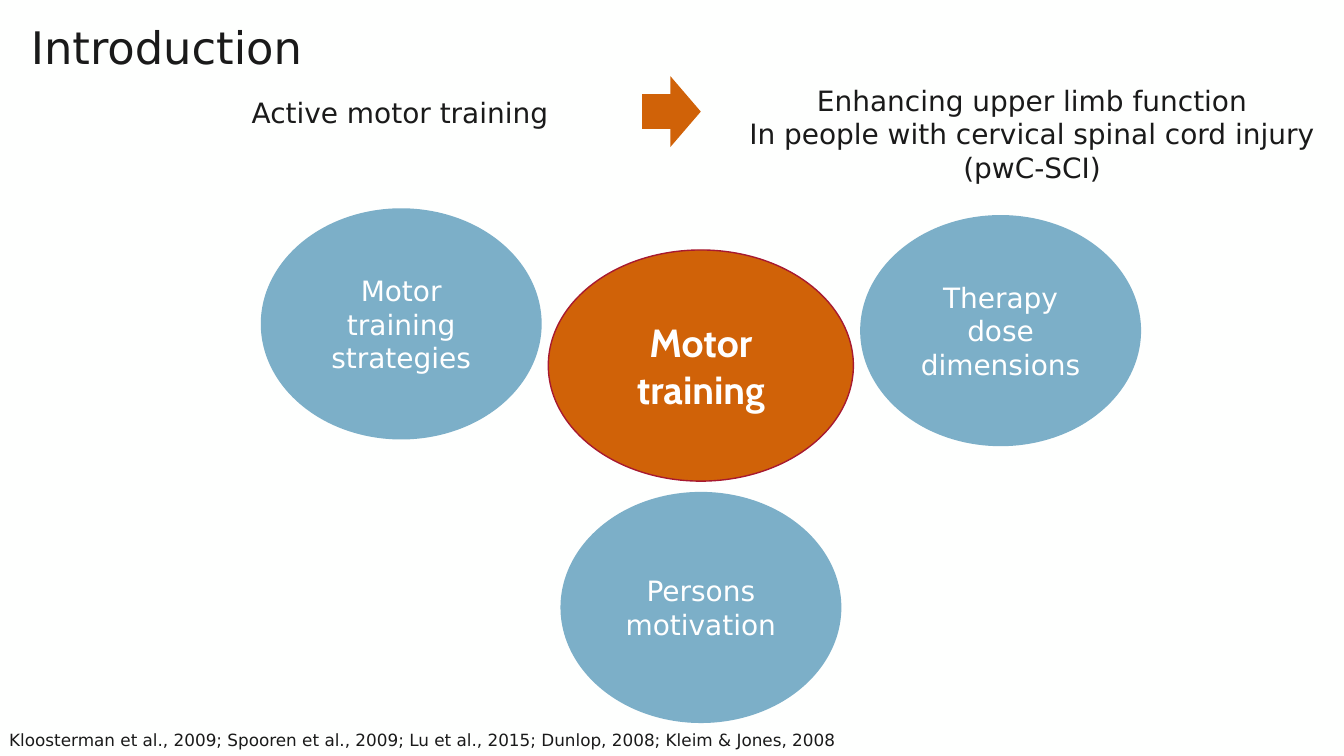
from dataclasses import dataclass

from lxml import etree
from pptx import Presentation
from pptx.dml.color import RGBColor
from pptx.enum.shapes import MSO_SHAPE
from pptx.enum.text import MSO_ANCHOR, MSO_AUTO_SIZE, PP_ALIGN
from pptx.oxml.ns import qn
from pptx.shapes.autoshape import Shape
from pptx.slide import Slide
from pptx.text.text import TextFrame
from pptx.util import Inches, Pt

LEFT, CENTER = PP_ALIGN.LEFT, PP_ALIGN.CENTER
TOP, MIDDLE = MSO_ANCHOR.TOP, MSO_ANCHOR.MIDDLE
ELLIPSE, DOWN_ARROW = MSO_SHAPE.OVAL, MSO_SHAPE.DOWN_ARROW
NO_AUTO_SIZE = MSO_AUTO_SIZE.NONE

SLIDE_WIDTH = 10
SLIDE_HEIGHT = SLIDE_WIDTH * 9 / 16

BODY_FONT, ACCENT_FONT = "DejaVu Sans", "Cabin"
INK, WHITE, BACKGROUND = "1A1A1A", "FFFFFF", "FEFFFE"
ORANGE, BLUE, RED = "D06208", "7CAFC8", "A71930"


@dataclass(frozen=True)
class Box:
    left: float
    top: float
    width: float
    height: float


@dataclass(frozen=True)
class Label:
    text: str
    box: Box
    size: float = 15
    align: PP_ALIGN = CENTER
    side_inset: float = 0.05


@dataclass(frozen=True)
class Bubble:
    text: str
    box: Box
    fill: str = BLUE
    line: str | None = None
    font: str = BODY_FONT
    size: float = 15
    bold: bool = False


TITLE_BOX = Box(0.18, 0.1, 8.99, 0.5)
ARROW_BOX = Box(4.75, 0.62, 0.49, 0.42)

LABELS = [
    Label("Enhancing upper limb function\n"
          "In people with cervical spinal cord injury (pwC-SCI)",
          Box(5.44, 0.57, 4.48, 1.08)),
    Label("Active motor training ", Box(1.37, 0.66, 3.28, 0.35)),
    Label("Kloosterman et al., 2009; Spooren et al., 2009; Lu et al., 2015; "
          "Dunlop, 2008; Kleim & Jones, 2008",
          Box(-0.03, 5.38, 7.73, 0.25), size=9, align=LEFT, side_inset=0.1),
]

BUBBLES = [
    Bubble("Therapy dose dimensions", Box(6.4, 1.6, 2.09, 1.72)),
    Bubble("Motor training", Box(4.08, 1.86, 2.27, 1.72), fill=ORANGE,
           line=RED, font=ACCENT_FONT, size=21, bold=True),
    Bubble("Persons motivation", Box(4.17, 3.66, 2.09, 1.72)),
    Bubble("Motor training strategies", Box(1.94, 1.55, 2.09, 1.72)),
]


def color(value: str) -> RGBColor:
    return RGBColor.from_string(value)


def lengths(box: Box) -> tuple[Inches, ...]:
    return tuple(Inches(n) for n in (box.left, box.top, box.width, box.height))


def write_text(frame: TextFrame, text: str, *, size: float,
               font: str = BODY_FONT, ink: str = INK, bold: bool = False,
               align: PP_ALIGN = LEFT, anchor: MSO_ANCHOR = TOP,
               side_inset: float = 0.05) -> None:
    frame.text = text
    frame.word_wrap = True
    frame.auto_size = NO_AUTO_SIZE
    frame.vertical_anchor = anchor
    frame.margin_left = frame.margin_right = Inches(side_inset)
    frame.margin_top = frame.margin_bottom = Inches(0.05)
    for paragraph in frame.paragraphs:
        paragraph.alignment = align
        for run in paragraph.runs:
            run.font.name = font
            run.font.size = Pt(size)
            run.font.bold = bold
            run.font.color.rgb = color(ink)


def add_title(slide: Slide, text: str) -> None:
    title = slide.shapes.title
    title.left, title.top, title.width, title.height = lengths(TITLE_BOX)
    write_text(title.text_frame, text, size=24)


def add_label(slide: Slide, label: Label) -> None:
    text_box = slide.shapes.add_textbox(*lengths(label.box))
    write_text(text_box.text_frame, label.text, size=label.size,
               align=label.align, side_inset=label.side_inset)


def add_filled_shape(slide: Slide, kind: MSO_SHAPE, box: Box, fill: str,
                     line: str | None = None, line_width: float = 0.75) -> Shape:
    shape = slide.shapes.add_shape(kind, *lengths(box))
    shape.shadow.inherit = False
    shape.fill.solid()
    shape.fill.fore_color.rgb = color(fill)
    if line is None:
        shape.line.fill.background()
    else:
        shape.line.color.rgb = color(line)
        shape.line.width = Pt(line_width)
    return shape


def add_arrow(slide: Slide) -> None:
    arrow = add_filled_shape(slide, DOWN_ARROW, ARROW_BOX, ORANGE, ORANGE, 1)
    arrow.rotation = 270
    outline = arrow.element.spPr.find(qn("a:ln"))
    etree.SubElement(outline, qn("a:miter"), lim="800000")


def add_bubble(slide: Slide, bubble: Bubble) -> None:
    shape = add_filled_shape(slide, ELLIPSE, bubble.box, bubble.fill, bubble.line)
    write_text(shape.text_frame, bubble.text, size=bubble.size,
               font=bubble.font, ink=WHITE, bold=bubble.bold,
               align=CENTER, anchor=MIDDLE, side_inset=0.1)


def main() -> None:
    presentation = Presentation()
    presentation.slide_width = Inches(SLIDE_WIDTH)
    presentation.slide_height = Inches(SLIDE_HEIGHT)
    slide = presentation.slides.add_slide(presentation.slide_layouts[5])
    slide.background.fill.solid()
    slide.background.fill.fore_color.rgb = color(BACKGROUND)

    add_title(slide, "Introduction")
    for label in LABELS:
        add_label(slide, label)
    add_arrow(slide)
    for bubble in BUBBLES:
        add_bubble(slide, bubble)

    presentation.save("out.pptx")


if __name__ == "__main__":
    main()
